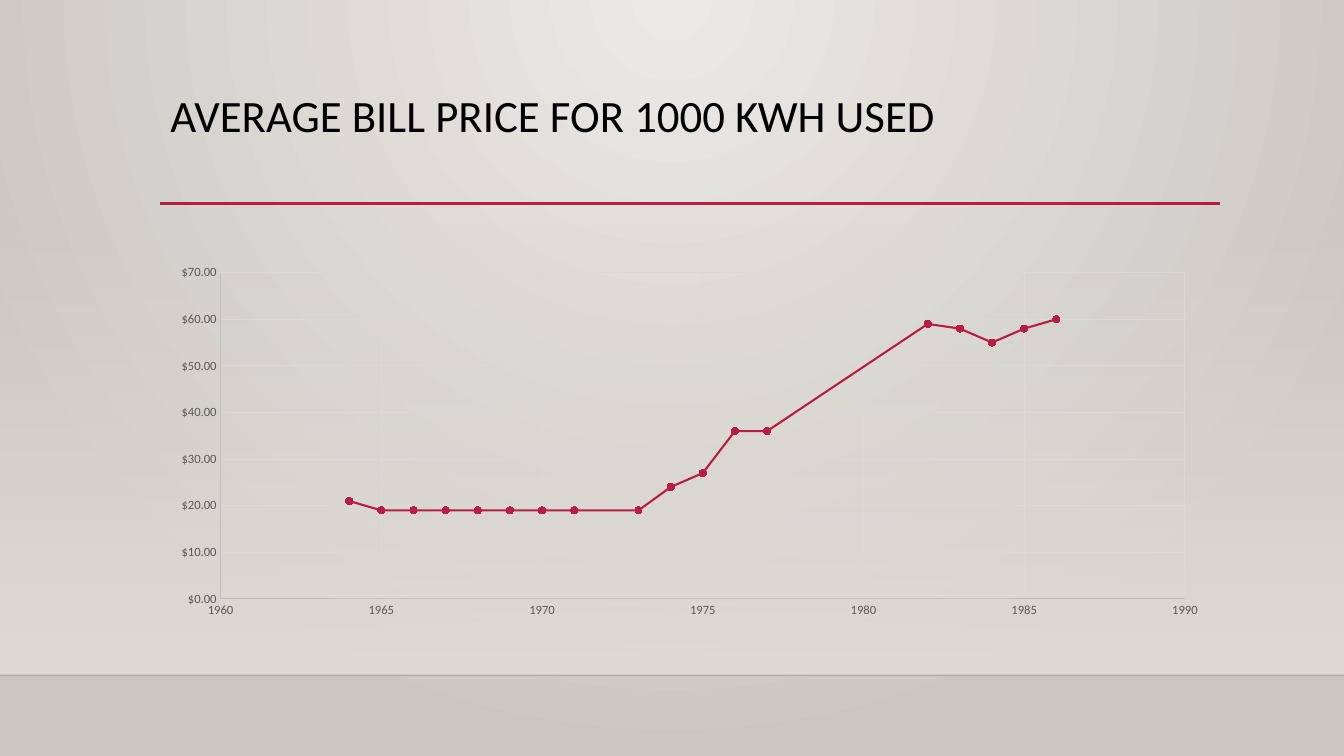
"""Build a slide with a scatter chart of average electricity bills by year."""
from dataclasses import dataclass

from pptx import Presentation
from pptx import util as u
from pptx.chart import data
from pptx.dml.color import RGBColor
from pptx.enum import chart as charts, shapes, text
from pptx.oxml import parse_xml
from pptx.oxml.ns import nsdecls, qn


@dataclass(frozen=True)
class Theme:
    font: str = "Calibri"
    title_size: int = 32
    chart_size: int = 10
    axis_size: int = 9
    ink: str = "000000"
    accent: str = "B71E42"
    label: str = "595959"
    axis: str = "BFBFBF"
    grid: str = "D9D9D9"
    glow: str = "ECEAE7"
    edge: str = "CAC7C1"
    wall: str = "DFDBD5"
    floor_line: str = "000001"


THEME = Theme()
LEFT, WIDTH = 1.59, 10.5
SLIDE_WIDTH, SLIDE_HEIGHT = 13.33, 7.5
BILLS = {
    1964: 21, 1965: 19, 1966: 19, 1967: 19, 1968: 19, 1969: 19,
    1970: 19, 1971: 19, 1973: 19, 1974: 24, 1975: 27, 1976: 36,
    1977: 36, 1982: 59, 1983: 58, 1984: 55, 1985: 58, 1986: 60,
}


def color(value):
    return RGBColor.from_string(value)


def format_font(font, size, value):
    font.name = THEME.font
    font.size = u.Pt(size)
    font.bold = False
    font.color.rgb = color(value)


def write(frame, words, *, size, value, spacing=1.0, anchor=text.MSO_ANCHOR.TOP):
    frame.word_wrap = True
    frame.auto_size = text.MSO_AUTO_SIZE.NONE
    frame.vertical_anchor = anchor
    paragraph = frame.paragraphs[0]
    paragraph.alignment = text.PP_ALIGN.LEFT
    paragraph.line_spacing = spacing
    run = paragraph.add_run()
    run.text = words
    format_font(run.font, size, value)


def set_gradient(fill, holder, stops, direction):
    fill.solid()
    solid = next(holder.iter(qn("a:solidFill")))
    stop_xml = "".join(
        f'<a:gs pos="{at * 1000}"><a:srgbClr val="{value}">'
        f'<a:alpha val="{opacity * 1000}"/></a:srgbClr></a:gs>'
        for at, value, opacity in stops
    )
    gradient = parse_xml(
        f'<a:gradFill {nsdecls("a")} rotWithShape="1">'
        f"<a:gsLst>{stop_xml}</a:gsLst>{direction}</a:gradFill>"
    )
    solid.getparent().replace(solid, gradient)


def add_rule(slide, left, right, top, value, weight, opacity=100):
    rule = slide.shapes.add_connector(
        shapes.MSO_CONNECTOR.STRAIGHT,
        u.Inches(left), u.Inches(top), u.Inches(right), u.Inches(top),
    )
    rule.line.color.rgb = color(value)
    rule.line.width = u.Pt(weight)
    properties = rule.element.spPr
    if opacity < 100:
        tint = next(properties.iter(qn("a:srgbClr")))
        tint.append(parse_xml(f'<a:alpha {nsdecls("a")} val="{opacity * 1000}"/>'))
    properties.append(parse_xml(f'<a:effectLst {nsdecls("a")}/>'))


def add_backdrop(slide):
    set_gradient(
        slide.background.fill, slide.element,
        [(0, THEME.glow, 100), (100, THEME.edge, 100)],
        '<a:path path="circle"><a:fillToRect l="43000" t="0" r="43000" b="100000"/></a:path>',
    )
    wall = slide.shapes.add_shape(
        shapes.MSO_SHAPE.RECTANGLE,
        u.Inches(0), u.Inches(2.21), u.Inches(SLIDE_WIDTH), u.Inches(4.49),
    )
    wall.shadow.inherit = False
    wall.line.fill.background()
    set_gradient(
        wall.fill, wall.element.spPr,
        [(0, THEME.wall, 0), (100, THEME.wall, 100)],
        '<a:lin ang="5400000" scaled="0"/>',
    )
    add_rule(slide, 0, SLIDE_WIDTH, 6.7, THEME.floor_line, 1, opacity=20)
    add_rule(slide, LEFT, 12.1, 2.02, THEME.accent, 2.5)


def add_title(slide, words):
    title = slide.shapes.title
    title.left, title.top = u.Inches(LEFT), u.Inches(0.88)
    title.width, title.height = u.Inches(WIDTH), u.Inches(1.15)
    write(title.text_frame, words, size=THEME.title_size, value=THEME.ink, spacing=0.9)


def format_axis(axis, low, high, step, number_format):
    axis.minimum_scale, axis.maximum_scale, axis.major_unit = low, high, step
    axis.major_tick_mark = axis.minor_tick_mark = charts.XL_TICK_MARK.NONE
    axis.has_major_gridlines = True
    for line, value in (
        (axis.format.line, THEME.axis),
        (axis.major_gridlines.format.line, THEME.grid),
    ):
        line.color.rgb = color(value)
        line.width = u.Pt(0.75)
    axis.tick_labels.number_format = number_format
    axis.tick_labels.number_format_is_linked = False
    format_font(axis.tick_labels.font, THEME.axis_size, THEME.label)


def add_bill_chart(slide):
    bill_data = data.XyChartData()
    bills = bill_data.add_series("Series 1")
    for year, price in BILLS.items():
        bills.add_data_point(year, price)
    chart = slide.shapes.add_chart(
        charts.XL_CHART_TYPE.XY_SCATTER_LINES,
        u.Inches(LEFT), u.Inches(2.56), u.Inches(WIDTH), u.Inches(3.64), bill_data,
    ).chart
    chart.has_title = chart.has_legend = False
    format_font(chart.font, THEME.chart_size, THEME.ink)
    format_axis(chart.category_axis, 1960, 1990, 5, "General")
    format_axis(chart.value_axis, 0, 70, 10, '"$"#,##0.00')
    chart.plots[0].vary_by_categories = False
    curve = chart.plots[0].series[0]
    curve.smooth = False
    curve.format.line.color.rgb = color(THEME.accent)
    curve.format.line.width = u.Pt(1.5)
    curve.marker.style = charts.XL_MARKER_STYLE.CIRCLE
    curve.marker.size = 5
    curve.marker.format.fill.solid()
    curve.marker.format.fill.fore_color.rgb = color(THEME.accent)
    curve.marker.format.line.color.rgb = color(THEME.accent)


def main():
    deck = Presentation()
    deck.slide_width, deck.slide_height = u.Inches(SLIDE_WIDTH), u.Inches(SLIDE_HEIGHT)
    slide = deck.slides.add_slide(deck.slide_layouts[5])
    add_backdrop(slide)
    add_title(slide, "AVERAGE BILL PRICE FOR 1000 KWH USED")
    add_bill_chart(slide)
    deck.save("out.pptx")


if __name__ == "__main__":
    main()
